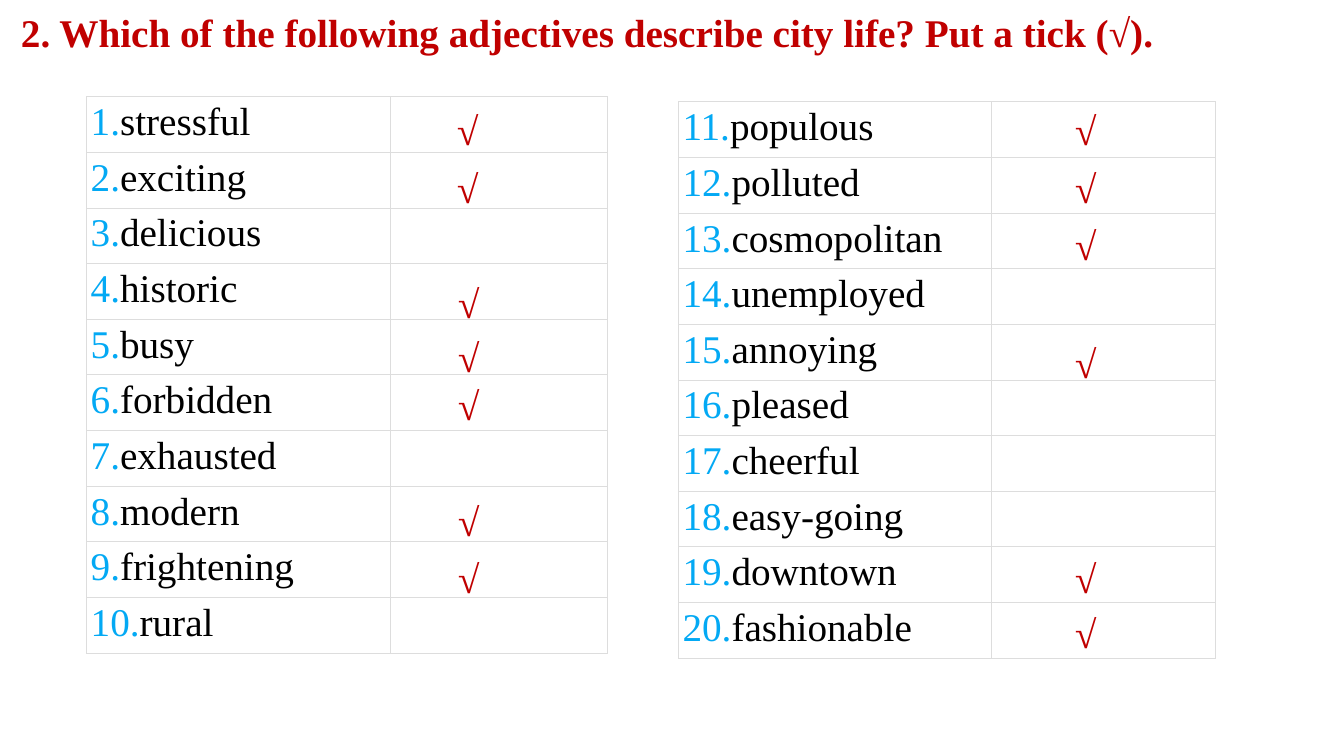
from dataclasses import dataclass

from lxml import etree
from pptx import Presentation, util as u
from pptx.dml.color import RGBColor
from pptx.enum import text
from pptx.oxml import ns


@dataclass(frozen=True)
class Theme:
    font: str = "Times New Roman"
    size: float = 28
    accent: str = "C00000"
    number: str = "03A9F4"
    word: str = "000000"
    border: str = "DDDDDD"
    border_pt: float = 0.75
    cell: str = "FFFFFF"


THEME = Theme()
TICK = "√"
TICK_SIZE = (0.42, 0.57)
CELL_FORMAT = {
    f"margin_{side}": u.Inches(0.04) for side in ("left", "top", "right", "bottom")
}
CELL_FORMAT["vertical_anchor"] = text.MSO_ANCHOR.TOP

LISTS = [
    {
        "box": (0.86, 0.96, 5.17, 5.52),
        "word_width": 3.01,
        "start": 1,
        "words": ["stressful", "exciting", "delicious", "historic", "busy",
                  "forbidden", "exhausted", "modern", "frightening", "rural"],
        "ticks": [(3.57, 0.05), (3.57, 0.62), (3.58, 1.76), (3.58, 2.3),
                  (3.58, 2.77), (3.58, 3.92), (3.58, 4.49)],
    },
    {
        "box": (6.73, 1.01, 5.33, 5.52),
        "word_width": 3.1,
        "start": 11,
        "words": ["populous", "polluted", "cosmopolitan", "unemployed", "annoying",
                  "pleased", "cheerful", "easy-going", "downtown", "fashionable"],
        "ticks": [(3.83, top) for top in (0, 0.57, 1.14, 2.31, 4.44, 4.99)],
    },
]


def apply_format(target, values):
    for name, value in values.items():
        setattr(target, name, value)


def add_run(p, content, color, **style):
    r = p.add_run()
    r.text = content
    apply_format(r.font, {"name": THEME.font, "size": u.Pt(THEME.size), **style})
    r.font.color.rgb = RGBColor.from_string(color)


def add_text(s, box, runs, wrap):
    sp = s.shapes.add_textbox(*map(u.Inches, box))
    tf = sp.text_frame
    apply_format(tf, {
        "word_wrap": wrap,
        "auto_size": text.MSO_AUTO_SIZE.SHAPE_TO_FIT_TEXT,
    })
    for content, style in runs:
        add_run(tf.paragraphs[0], content, THEME.accent, **style)


def style_cell(cell):
    props = cell._tc.get_or_add_tcPr()
    for side in ("lnL", "lnR", "lnT", "lnB"):
        line = etree.SubElement(props, ns.qn(f"a:{side}"), w=str(u.Pt(THEME.border_pt)))
        fill = etree.SubElement(line, ns.qn("a:solidFill"))
        etree.SubElement(fill, ns.qn("a:srgbClr"), val=THEME.border)
    cell.fill.solid()
    cell.fill.fore_color.rgb = RGBColor.from_string(THEME.cell)
    apply_format(cell, CELL_FORMAT)


def add_title(s, box):
    add_text(s, box, [
        ("2. Which of the following adjectives describe city life? Put a tick (",
         {"bold": True}),
        (TICK, {"bold": False, "italic": True}),
        (").", {"bold": True}),
    ], wrap=True)


def add_word_table(s, box, word_width, start, words):
    table = s.shapes.add_table(len(words), 2, *map(u.Inches, box)).table
    apply_format(table, {"first_row": False, "horz_banding": False})
    for column, width in zip(table.columns, (word_width, box[2] - word_width)):
        column.width = u.Inches(width)
    for row in table.rows:
        row.height = u.Inches(box[3] / len(words))
    for cell in table.iter_cells():
        style_cell(cell)
    for i, word in enumerate(words):
        p = table.cell(i, 0).text_frame.paragraphs[0]
        add_run(p, f"{start + i}.", THEME.number)
        add_run(p, word, THEME.word)


def add_ticks(s, box, ticks):
    for dx, dy in ticks:
        add_text(s, (box[0] + dx, box[1] + dy, *TICK_SIZE),
                 [(TICK, {"bold": True, "italic": True})], wrap=False)


def main():
    prs = Presentation()
    apply_format(prs, {"slide_width": u.Inches(13.33), "slide_height": u.Inches(7.5)})
    s = prs.slides.add_slide(prs.slide_layouts[6])
    add_title(s, (0.11, 0.03, 13.2, 0.57))
    for group in LISTS:
        add_word_table(s, group["box"], group["word_width"], group["start"], group["words"])
    for group in LISTS:
        add_ticks(s, group["box"], group["ticks"])
    prs.save("out.pptx")


if __name__ == "__main__":
    main()
